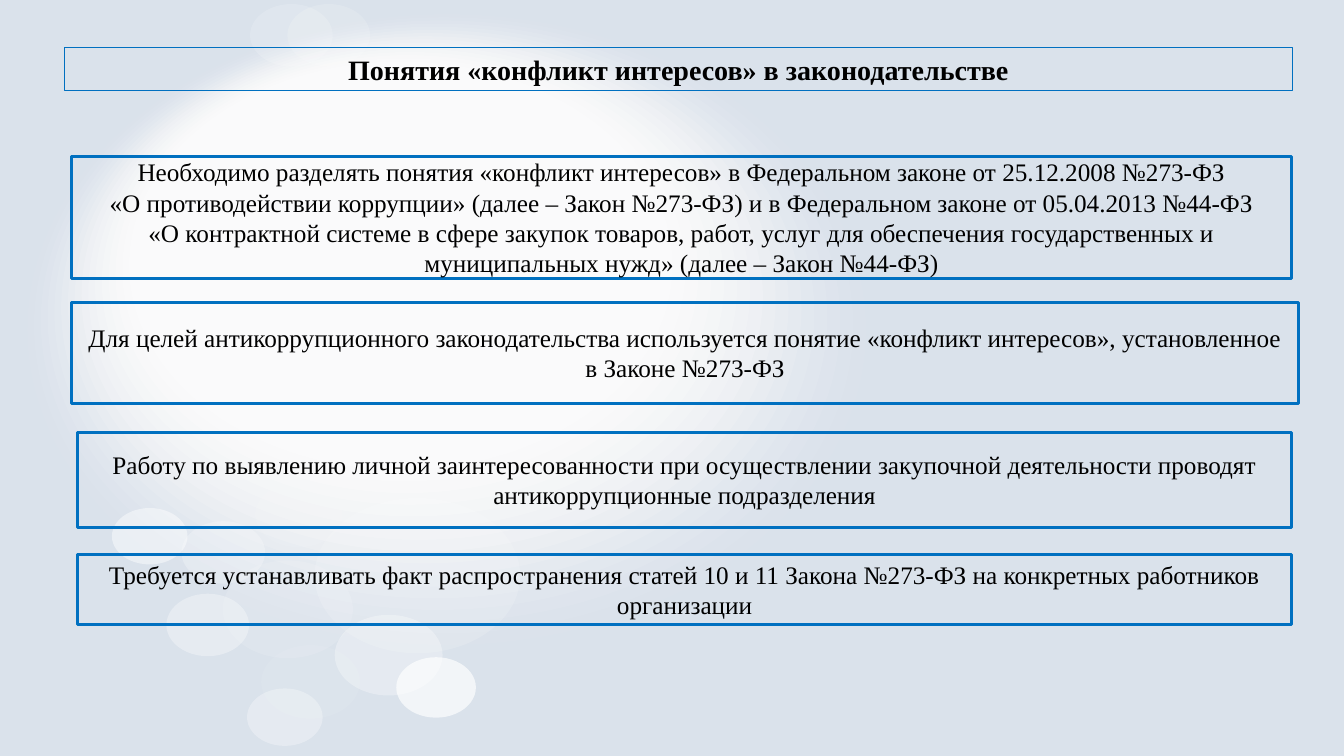
from lxml import etree
from pptx import Presentation
from pptx.dml.color import RGBColor
from pptx.enum.shapes import MSO_SHAPE
from pptx.enum.text import MSO_ANCHOR, MSO_AUTO_SIZE, PP_ALIGN
from pptx.oxml.ns import qn
from pptx.util import Inches, Pt

RECT, OVAL = MSO_SHAPE.RECTANGLE, MSO_SHAPE.OVAL
TOP, MIDDLE = MSO_ANCHOR.TOP, MSO_ANCHOR.MIDDLE
CENTER = PP_ALIGN.CENTER
NO_FIT = MSO_AUTO_SIZE.NONE
FONT = "Times New Roman"
BLUE, BLACK, WHITE, BACKDROP = "0070C0", "000000", "FFFFFF", "DAE2EB"


def rgb(value):
    return RGBColor.from_string(value)


def write(sp, paragraphs, size, bold, anchor, line_width):
    """Outline a box in blue and fill it with centred text."""
    sp.fill.background()
    sp.line.color.rgb = rgb(BLUE)
    sp.line.width = Pt(line_width)
    tf = sp.text_frame
    tf.text = "\n".join(paragraphs)
    tf.word_wrap = True
    tf.auto_size = NO_FIT
    tf.vertical_anchor = anchor
    for p in tf.paragraphs:
        p.alignment = CENTER
        p.font.name = FONT
        p.font.size = Pt(size)
        p.font.bold = bold
        p.font.color.rgb = rgb(BLACK)


prs = Presentation()
prs.slide_width, prs.slide_height = Inches(13.33), Inches(7.5)
s = prs.slides.add_slide(prs.slide_layouts[5])

# Background
s.background.fill.solid()
s.background.fill.fore_color.rgb = rgb(BACKDROP)

# Soft glow: nested ovals, smaller and more opaque step by step
STEPS = 15
ovals = []
for i in range(STEPS + 1):
    t = i / STEPS
    ovals.append((0.27 + 1.01 * t, 0.14 + 0.47 * t,
                  8.32 - 2.93 * t, 6.26 - 2.21 * t, 3 + 24 * t))

# Bubbles: left, top, width, height, opacity in percent
ovals += [
    (2.21, 5.56, 1.29, 0.97, 12),
    (3.12, 4.94, 2.04, 1.54, 15),
    (1.11, 5.04, 0.75, 0.56, 45),
    (2.53, 4.78, 0.87, 0.65, 8),
    (1.80, 5.17, 0.83, 0.62, 25),
    (1.65, 5.89, 0.82, 0.62, 33),
    (2.59, 6.40, 0.98, 0.73, 7),
    (2.45, 6.83, 0.75, 0.57, 31),
    (3.93, 6.52, 0.79, 0.60, 67),
    (3.32, 6.10, 1.07, 0.80, 31),
    (2.85, 0.04, 0.82, 0.62, 15),
    (2.48, 0.04, 0.82, 0.62, 16),
]
for left, top, width, height, opacity in ovals:
    sp = s.shapes.add_shape(OVAL, Inches(left), Inches(top), Inches(width), Inches(height))
    sp.shadow.inherit = False
    sp.line.fill.background()
    sp.fill.solid()
    sp.fill.fore_color.rgb = rgb(WHITE)
    color = sp.element.spPr.find(qn("a:solidFill"))[0]
    etree.SubElement(color, qn("a:alpha")).set("val", str(round(opacity * 1000)))

# Title, brought in front of the bubbles
title = s.shapes.title
title.left, title.top = Inches(0.64), Inches(0.47)
title.width, title.height = Inches(12.18), Inches(0.43)
write(title, ["Понятия «конфликт интересов» в законодательстве"], 20, True, TOP, 0.75)
title.element.getparent().append(title.element)

# Statement boxes
boxes = [
    (0.71, 1.55, 12.10, 1.21, [
        "Необходимо разделять понятия «конфликт интересов» в Федеральном законе от 25.12.2008 №273-ФЗ",
        "«О противодействии коррупции» (далее – Закон №273-ФЗ) и в Федеральном законе от 05.04.2013 №44-ФЗ",
        "«О контрактной системе в сфере закупок товаров, работ, услуг для обеспечения государственных и "
        "муниципальных нужд» (далее – Закон №44-ФЗ)"]),
    (0.71, 3.00, 12.17, 1.00, [
        "Для целей антикоррупционного законодательства используется понятие «конфликт интересов», "
        "установленное в Законе №273-ФЗ"]),
    (0.77, 4.29, 12.04, 0.94, [
        "Работу по выявлению личной заинтересованности при осуществлении закупочной деятельности "
        "проводят антикоррупционные подразделения"]),
    (0.77, 5.50, 12.04, 0.70, [
        "Требуется устанавливать факт распространения статей 10 и 11 Закона №273-ФЗ "
        "на конкретных работников организации"]),
]
for left, top, width, height, paragraphs in boxes:
    sp = s.shapes.add_shape(RECT, Inches(left), Inches(top), Inches(width), Inches(height))
    sp.shadow.inherit = False
    write(sp, paragraphs, 18, False, MIDDLE, 2)

prs.save("out.pptx")
